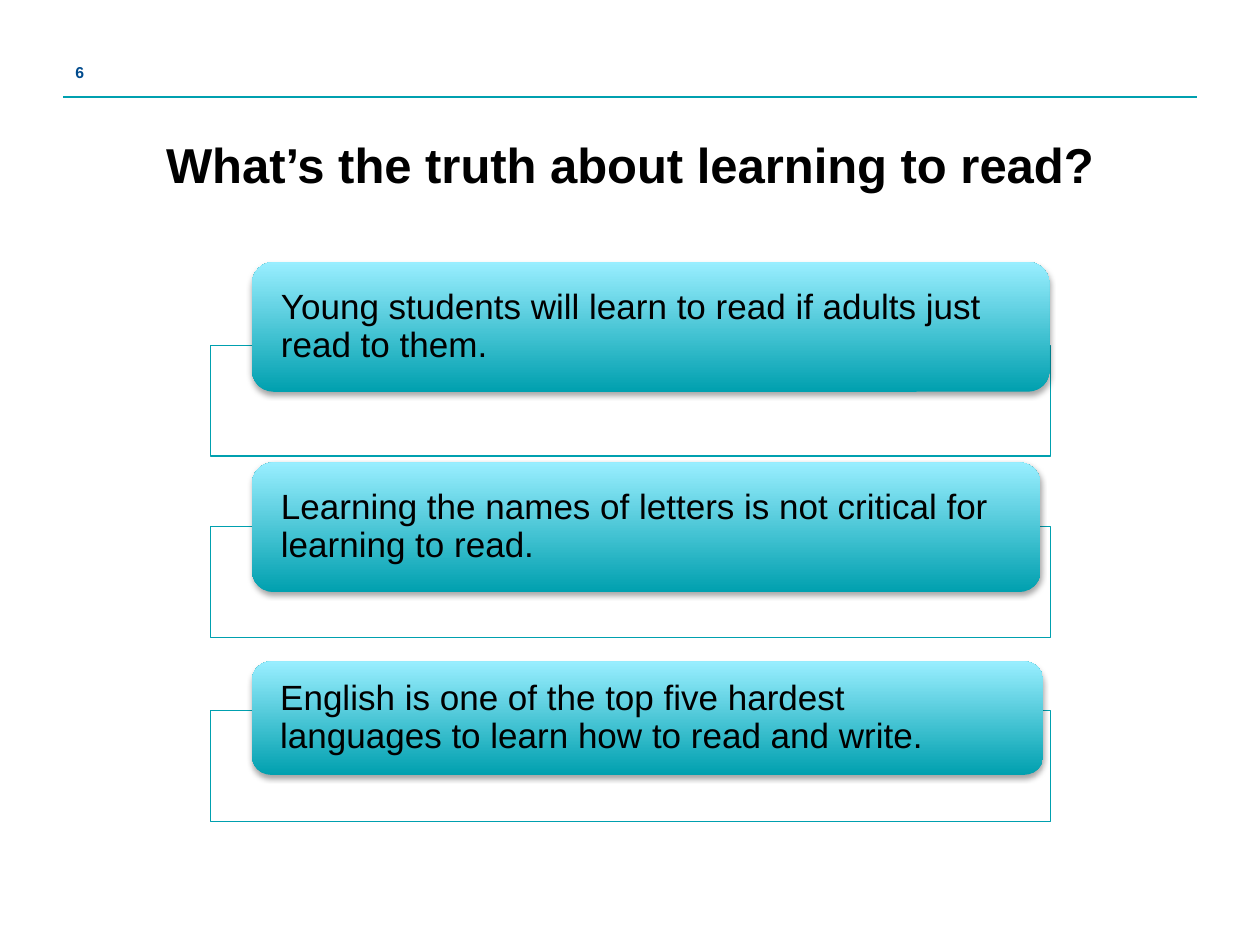
from dataclasses import dataclass

from lxml import etree
from pptx import Presentation
from pptx.dml.color import RGBColor
from pptx.enum.shapes import MSO_CONNECTOR, MSO_SHAPE
from pptx.enum.text import MSO_ANCHOR, PP_ALIGN
from pptx.oxml import parse_xml
from pptx.oxml.ns import nsdecls, qn
from pptx.util import Inches, Pt

RECT, ROUNDED = MSO_SHAPE.RECTANGLE, MSO_SHAPE.ROUNDED_RECTANGLE
STRAIGHT = MSO_CONNECTOR.STRAIGHT
TOP, MIDDLE = MSO_ANCHOR.TOP, MSO_ANCHOR.MIDDLE
LEFT, CENTER = PP_ALIGN.LEFT, PP_ALIGN.CENTER
TEAL = RGBColor(0x00, 0xA0, 0xAF)
AQUA = RGBColor(0x99, 0xEE, 0xFF)
NAVY = RGBColor(0x00, 0x4B, 0x8D)
BLACK = RGBColor(0, 0, 0)
WHITE = RGBColor(255, 255, 255)
SHADOW = (
    f'<a:effectLst {nsdecls("a")}>'
    '<a:outerShdw blurRad="40000" dist="23000" dir="5400000" rotWithShape="0">'
    '<a:srgbClr val="000000"><a:alpha val="35000"/></a:srgbClr>'
    '</a:outerShdw></a:effectLst>'
)


@dataclass
class Claim:
    text: str
    frame_top: float
    top: float
    width: float
    height: float


CLAIMS = [
    Claim("Young students will learn to read if adults just read to them.",
          2.74, 2.08, 6.33, 1.03),
    Claim("Learning the names of letters is not critical for learning to read.",
          4.18, 3.67, 6.26, 1.03),
    Claim("English is one of the top five hardest languages to learn how to read and write.",
          5.64, 5.25, 6.28, 0.9),
]


def write(sp, text: str, size: int, color: RGBColor, bold: bool = False,
          anchor=MIDDLE, align=LEFT, spacing=1.0, **margins) -> None:
    tf = sp.text_frame
    for name, value in {"word_wrap": True, "vertical_anchor": anchor, **margins}.items():
        setattr(tf, name, value)
    p = tf.paragraphs[0]
    p.alignment, p.line_spacing = align, spacing
    r = p.add_run()
    r.text = text
    r.font.color.rgb = color
    for name, value in {"name": "Arial", "size": Pt(size), "bold": bold}.items():
        setattr(r.font, name, value)


def add_rule(s) -> None:
    line = s.shapes.add_connector(STRAIGHT, Inches(0.5), Inches(0.77), Inches(9.5), Inches(0.77))
    line.line.color.rgb = TEAL
    line.line.width = Pt(1)
    etree.SubElement(line._element.spPr, qn("a:effectLst"))


def add_claim(s, claim: Claim) -> None:
    frame = s.shapes.add_shape(RECT, Inches(1.67), Inches(claim.frame_top), Inches(6.67), Inches(0.88))
    frame.shadow.inherit = False
    frame.fill.solid()
    frame.fill.fore_color.rgb = WHITE
    rgb = frame._element.spPr.find(f"{qn('a:solidFill')}/{qn('a:srgbClr')}")
    etree.SubElement(rgb, qn("a:alpha"), val="90000")
    frame.line.color.rgb = TEAL
    frame.line.width = Pt(0.75)

    sp = s.shapes.add_shape(ROUNDED, Inches(2), Inches(claim.top),
                            Inches(claim.width), Inches(claim.height))
    sp.fill.gradient()
    sp.fill.gradient_angle = 90
    for stop, color in zip(sp.fill.gradient_stops, (TEAL, AQUA)):
        stop.color.rgb = color
    sp.line.fill.background()
    sp._element.spPr.append(parse_xml(SHADOW))
    write(sp, claim.text, 20, BLACK, spacing=0.9, margin_left=Inches(0.18),
          margin_right=Inches(0.18), margin_top=0, margin_bottom=0)


def main() -> None:
    """Build the slide about learning to read and save it."""
    prs = Presentation()
    prs.slide_width, prs.slide_height = Inches(10), Inches(7.5)
    s = prs.slides.add_slide(prs.slide_layouts[6])
    add_rule(s)
    title = s.shapes.add_textbox(Inches(0.5), Inches(1.1), Inches(9), Inches(1.06))
    write(title, "What’s the truth about learning to read?", 28, BLACK, bold=True,
          anchor=TOP, align=CENTER, spacing=Pt(28))
    number = s.shapes.add_textbox(Inches(0.5), Inches(0.37), Inches(2.33), Inches(0.4))
    write(number, "6", 9, NAVY, bold=True)
    for claim in CLAIMS:
        add_claim(s, claim)
    prs.save("out.pptx")


if __name__ == "__main__":
    main()
